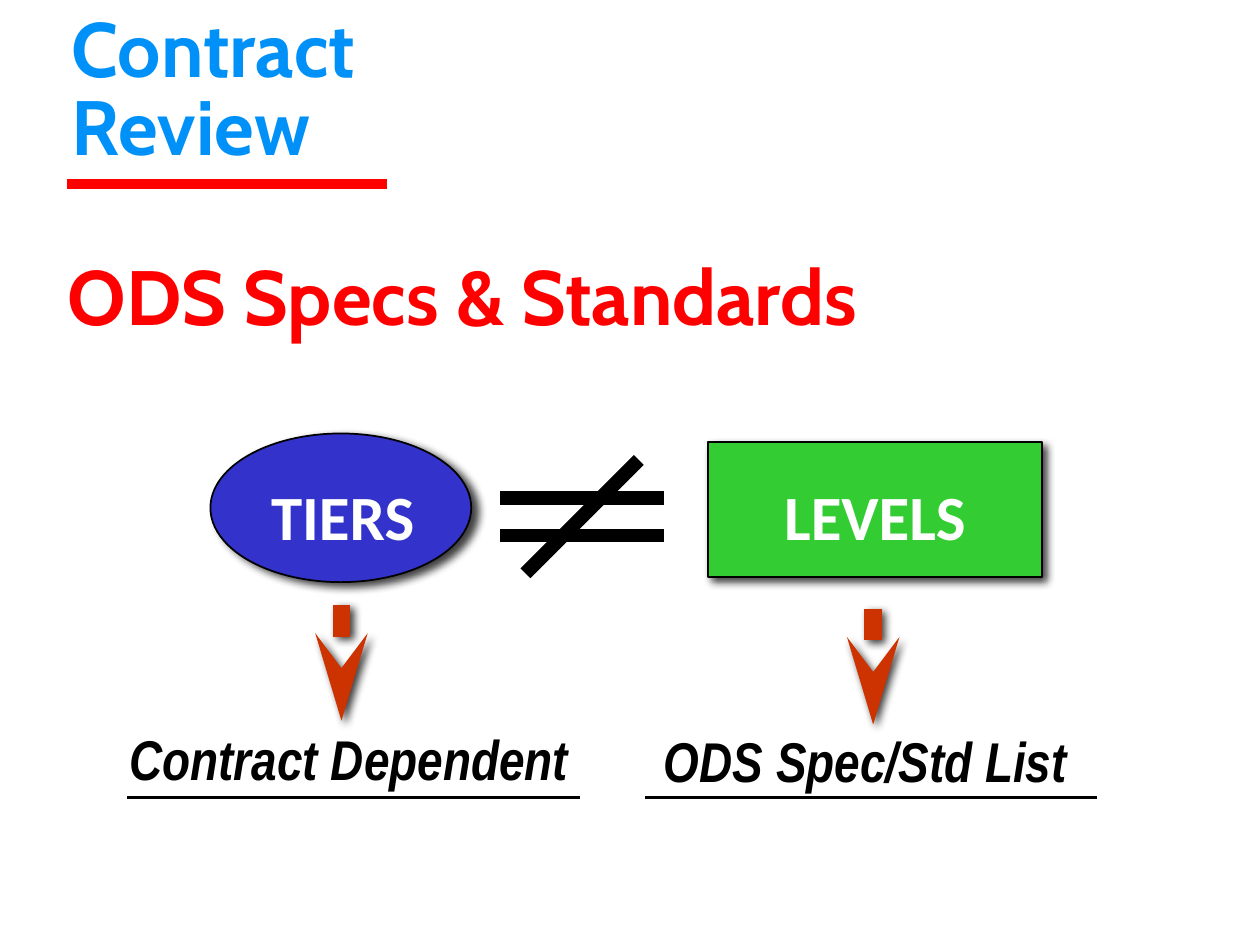
from dataclasses import dataclass

from lxml.etree import SubElement
from pptx import Presentation
from pptx.dml.color import RGBColor
from pptx.enum.shapes import MSO_CONNECTOR, MSO_SHAPE
from pptx.enum.text import MSO_ANCHOR, PP_ALIGN
from pptx.oxml.ns import qn
from pptx.util import Inches, Pt


@dataclass(frozen=True)
class Theme:
    black: str = "000000"
    white: str = "FFFFFF"
    red: str = "FF0000"
    sky: str = "0091F8"
    blue: str = "3333CC"
    green: str = "33CC33"
    rust: str = "CC3300"
    head: str = "Cabin"
    body: str = "Calibri"
    note: str = "Arial Narrow"
    big: int = 44
    mid: int = 36
    small: int = 32


@dataclass(frozen=True)
class Shade:
    drop: float = 3
    angle: int = 45


@dataclass(frozen=True)
class Box:
    x: float
    y: float
    w: float
    h: float

    def place(self) -> tuple:
        return tuple(Inches(v) for v in (self.x, self.y, self.w, self.h))


@dataclass(frozen=True)
class Branch:
    """A named shape, the arrow below it and the underlined note it leads to."""
    name: str
    kind: MSO_SHAPE
    fill: str
    shade: Shade
    shape: Box
    label: Box
    stem: tuple[float, float]
    note: str
    text: Box
    rule: float


THEME = Theme()
STEM = 0.92
RULE = 3.59
BRANCHES = (
    Branch("TIERS", MSO_SHAPE.OVAL, THEME.blue, Shade(4.5, 28),
           Box(1.67, 3.44, 2.07, 1.18), Box(1.73, 3.74, 1.98, 0.7),
           (2.71, 4.8), "Contract Dependent", Box(0.93, 5.7, 4.01, 0.63), 1.01),
    Branch("LEVELS", MSO_SHAPE.RECTANGLE, THEME.green, Shade(),
           Box(5.62, 3.51, 2.65, 1.07), Box(5.65, 3.74, 2.59, 0.7),
           (6.93, 4.83), "ODS Spec/Std List", Box(5.17, 5.72, 3.92, 0.63), 5.12),
)
UNEQUAL = (
    ((3.97, 3.95), (5.27, 3.95)),
    ((3.97, 4.25), (5.27, 4.25)),
    ((5.07, 3.65), (4.17, 4.55)),
)


def style(para, face: str, size: int, color: str, **extra) -> None:
    looks = {"name": face, "size": Pt(size), "bold": True} | extra
    for key, value in looks.items():
        setattr(para.font, key, value)
    para.font.color.rgb = RGBColor.from_string(color)


def cast(item, shade: Shade | None) -> None:
    """Replace the theme shadow by the given one, or by none."""
    props = item._element.spPr
    for old in props.findall(qn("a:effectLst")):
        props.remove(old)
    effects = SubElement(props, qn("a:effectLst"))
    if shade:
        outer = SubElement(effects, qn("a:outerShdw"), blurRad=str(Pt(5)),
                           dist=str(Pt(shade.drop)), dir=str(shade.angle * 60000),
                           algn="ctr", rotWithShape="0")
        tint = SubElement(outer, qn("a:srgbClr"), val=THEME.black)
        SubElement(tint, qn("a:alpha"), val="75000")


def draw(group, start: tuple, end: tuple, color: str, width: float,
         shade: Shade | None = None):
    points = (Inches(v) for v in (*start, *end))
    line = group.add_connector(MSO_CONNECTOR.STRAIGHT, *points)
    line.line.color.rgb = RGBColor.from_string(color)
    line.line.width = Pt(width)
    cast(line, shade)
    return line


def write(slide, text: str, box: Box, face: str, size: int, color: str,
          wrap: bool = True, align=PP_ALIGN.LEFT, **extra) -> None:
    frame = slide.shapes.add_textbox(*box.place()).text_frame
    frame.word_wrap = wrap
    para = frame.paragraphs[0]
    para.text = text
    para.alignment = align
    style(para, face, size, color, **extra)


def branch(slide, part: Branch) -> None:
    shape = slide.shapes.add_shape(part.kind, *part.shape.place())
    shape.fill.solid()
    shape.fill.fore_color.rgb = RGBColor.from_string(part.fill)
    shape.line.color.rgb = RGBColor.from_string(THEME.black)
    shape.line.width = Pt(1)
    cast(shape, part.shade)
    write(slide, part.name, part.label, THEME.body, THEME.mid, THEME.white,
          align=PP_ALIGN.CENTER)
    x, y = part.stem
    arrow = draw(slide.shapes, part.stem, (x, y + STEM), THEME.rust, 10, Shade())
    SubElement(arrow.line._get_or_add_ln(), qn("a:tailEnd"),
               type="stealth", w="med", len="lg")
    write(slide, part.note, part.text, THEME.note, THEME.small, THEME.black,
          italic=True)
    draw(slide.shapes, (part.rule, 6.33), (part.rule + RULE, 6.33), THEME.black, 2)


def head(slide) -> None:
    title = slide.shapes.title
    title.left, title.top, title.width, title.height = Box(0.47, 0.2, 8.5, 1.21).place()
    frame = title.text_frame
    frame.vertical_anchor = MSO_ANCHOR.BOTTOM
    frame.word_wrap = True
    para = frame.paragraphs[0]
    para.text = "Contract\vReview"
    para.alignment = PP_ALIGN.LEFT
    para.line_spacing = 0.85
    style(para, THEME.head, THEME.big, THEME.sky)
    draw(slide.shapes, (0.53, 1.46), (3.07, 1.46), THEME.red, 6)
    write(slide, "ODS Specs & Standards", Box(0.44, 1.92, 7.12, 0.84),
          THEME.head, THEME.big, THEME.red, wrap=False)


def main() -> None:
    deck = Presentation()
    deck.slide_width, deck.slide_height = Inches(10), Inches(7.5)
    slide = deck.slides.add_slide(deck.slide_layouts[5])
    head(slide)
    for part in BRANCHES:
        branch(slide, part)
    sign = slide.shapes.add_group_shape()
    for start, end in UNEQUAL:
        draw(sign.shapes, start, end, THEME.black, 8)
    deck.save("out.pptx")


if __name__ == "__main__":
    main()
